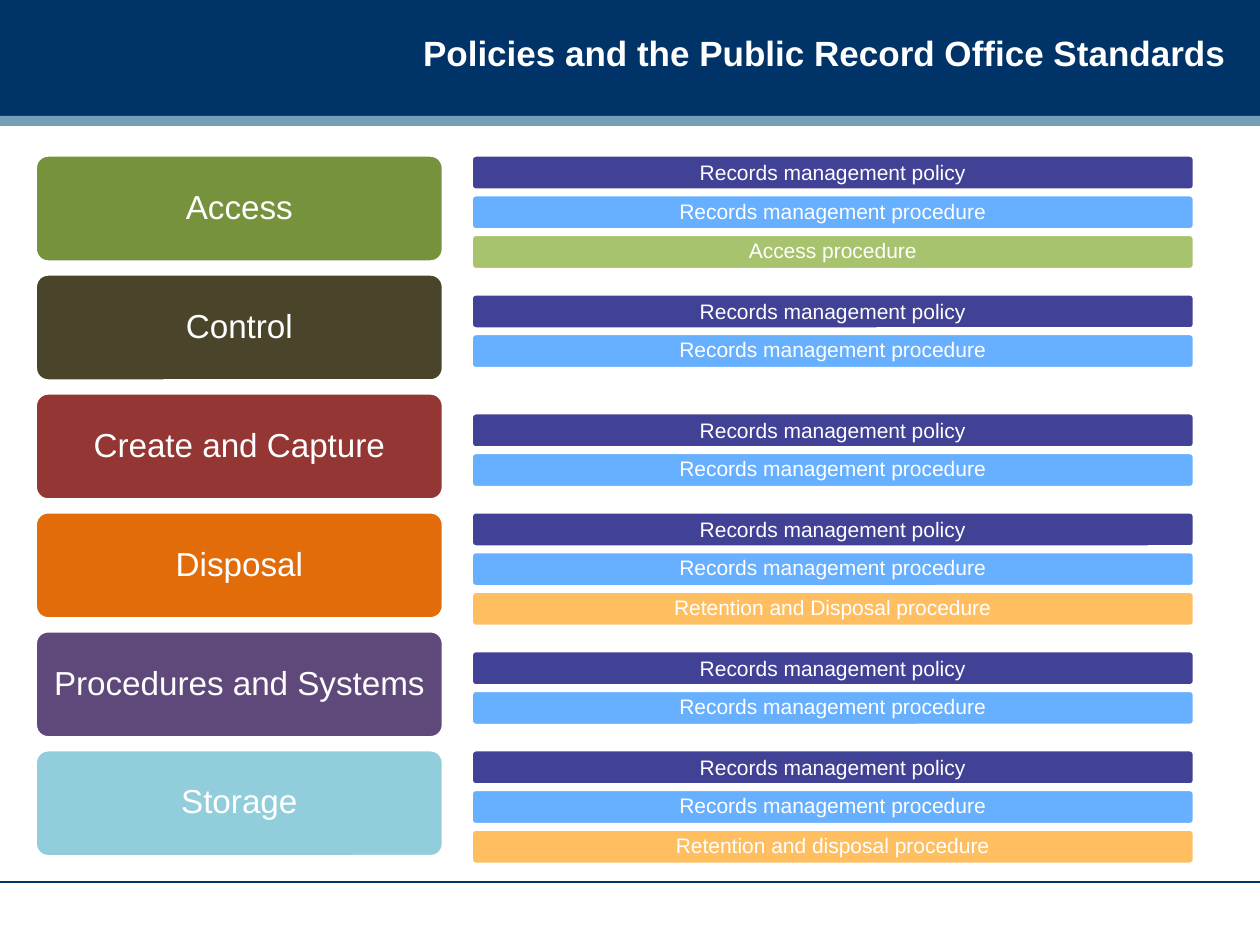
from pptx import Presentation
from pptx.dml.color import RGBColor
from pptx.enum.shapes import MSO_CONNECTOR, MSO_SHAPE
from pptx.enum.text import MSO_ANCHOR, MSO_AUTO_SIZE, PP_ALIGN
from pptx.oxml.ns import qn
from pptx.util import Inches, Pt
from lxml.etree import SubElement

# Content: each standard with its colour and the documents that cover it
TITLE = "Policies and the Public Record Office Standards"
POLICY = ("Records management policy", "2D2D8A")
PROCEDURE = ("Records management procedure", "57A7FF")
STANDARDS = [
    ("Access", "76923C", [POLICY, PROCEDURE, ("Access procedure", "9EBD5F")]),
    ("Control", "4A442A", [POLICY, PROCEDURE]),
    ("Create and Capture", "943634", [POLICY, PROCEDURE]),
    ("Disposal", "E36C0A",
     [POLICY, PROCEDURE, ("Retention and Disposal procedure", "FFB84F")]),
    ("Procedures and Systems", "5F497A", [POLICY, PROCEDURE]),
    ("Storage", "92CDDC",
     [POLICY, PROCEDURE, ("Retention and disposal procedure", "FFB84F")]),
]

THEME = {"font": "Arial", "white": "FFFFFF", "navy": "003368", "accent": "759FB8",
         "title_size": 20, "standard_size": 19, "document_size": 12}

# Layout in inches
TOP, LAST_TOP = 1.23, 5.95
ROW_PITCH = (LAST_TOP - TOP) / (len(STANDARDS) - 1)
STANDARD_LEFT, STANDARD_WIDTH, STANDARD_HEIGHT = 0.28, 3.24, 0.85
BAR_LEFT, BAR_WIDTH, BAR_HEIGHT = 3.74, 5.74, 0.28
BAR_PITCH, MAX_BARS = 0.315, 3


def color(name):
    return RGBColor.from_string(THEME.get(name, name))


def format_text(shape, text, size, align, margins, bold=False):
    frame = shape.text_frame
    frame.text = text
    frame.word_wrap = True
    frame.auto_size = MSO_AUTO_SIZE.NONE
    frame.vertical_anchor = MSO_ANCHOR.MIDDLE
    frame.margin_left = frame.margin_right = Inches(margins[0])
    frame.margin_top = frame.margin_bottom = Inches(margins[1])
    para = frame.paragraphs[0]
    para.alignment = align
    para.font.name = THEME["font"]
    para.font.size = Pt(THEME[size])
    para.font.bold = bold
    para.font.color.rgb = color("white")
    return para


def add_block(page, kind, box, fill):
    shape = page.shapes.add_shape(kind, *map(Inches, box))
    shape.shadow.inherit = False
    shape.fill.solid()
    shape.fill.fore_color.rgb = color(fill)
    shape.line.fill.background()
    return shape


def add_label(page, box, fill, corner, text, size, margins):
    shape = add_block(page, MSO_SHAPE.ROUNDED_RECTANGLE, box, fill)
    shape.adjustments[0] = corner
    shape.line.color.rgb = color("white")
    shape.line.width = Pt(2)
    para = format_text(shape, text, size, PP_ALIGN.CENTER, margins)
    return shape, para


deck = Presentation()
deck.slide_width, deck.slide_height = Inches(10), Inches(7.5)
page = deck.slides.add_slide(deck.slide_layouts[5])

# Title over the header band
title = page.shapes.title
title.left, title.top, title.width, title.height = map(Inches, (3.25, 0, 6.58, 0.83))
format_text(title, TITLE, "title_size", PP_ALIGN.RIGHT, (0.1, 0.05), bold=True)
for band_box, band_color in [((0, 0, 10, 0.92), "navy"), ((0, 0.92, 10, 0.08), "accent")]:
    band = add_block(page, MSO_SHAPE.RECTANGLE, band_box, band_color)
    title.element.addprevious(band.element)

# Footer rule
rule = page.shapes.add_connector(
    MSO_CONNECTOR.STRAIGHT, Inches(0), Inches(7), Inches(10), Inches(7))
rule.line.color.rgb = color("navy")
rule.line.width = Pt(0.75)
SubElement(rule.element.spPr, qn("a:effectLst"))

# Standards on the left, their documents centred over three slots on the right
for row, (standard, standard_color, documents) in enumerate(STANDARDS):
    row_top = TOP + row * ROW_PITCH
    _, para = add_label(
        page, (STANDARD_LEFT, row_top, STANDARD_WIDTH, STANDARD_HEIGHT),
        standard_color, 0.12, standard, "standard_size", (0.1, 0.06))
    para.line_spacing = 0.9

    first_bar = row_top + (MAX_BARS - len(documents)) / 2 * BAR_PITCH
    for slot, (document, bar_color) in enumerate(documents):
        bar, para = add_label(
            page, (BAR_LEFT, first_bar + slot * BAR_PITCH, BAR_WIDTH, BAR_HEIGHT),
            bar_color, 0.13, document, "document_size", (0.04, 0.02))
        if slot:
            para.line_spacing = 0.9
        fill_color = bar.element.spPr.find(qn("a:solidFill"))[0]
        SubElement(fill_color, qn("a:alpha")).set("val", "90000")

deck.save("out.pptx")
